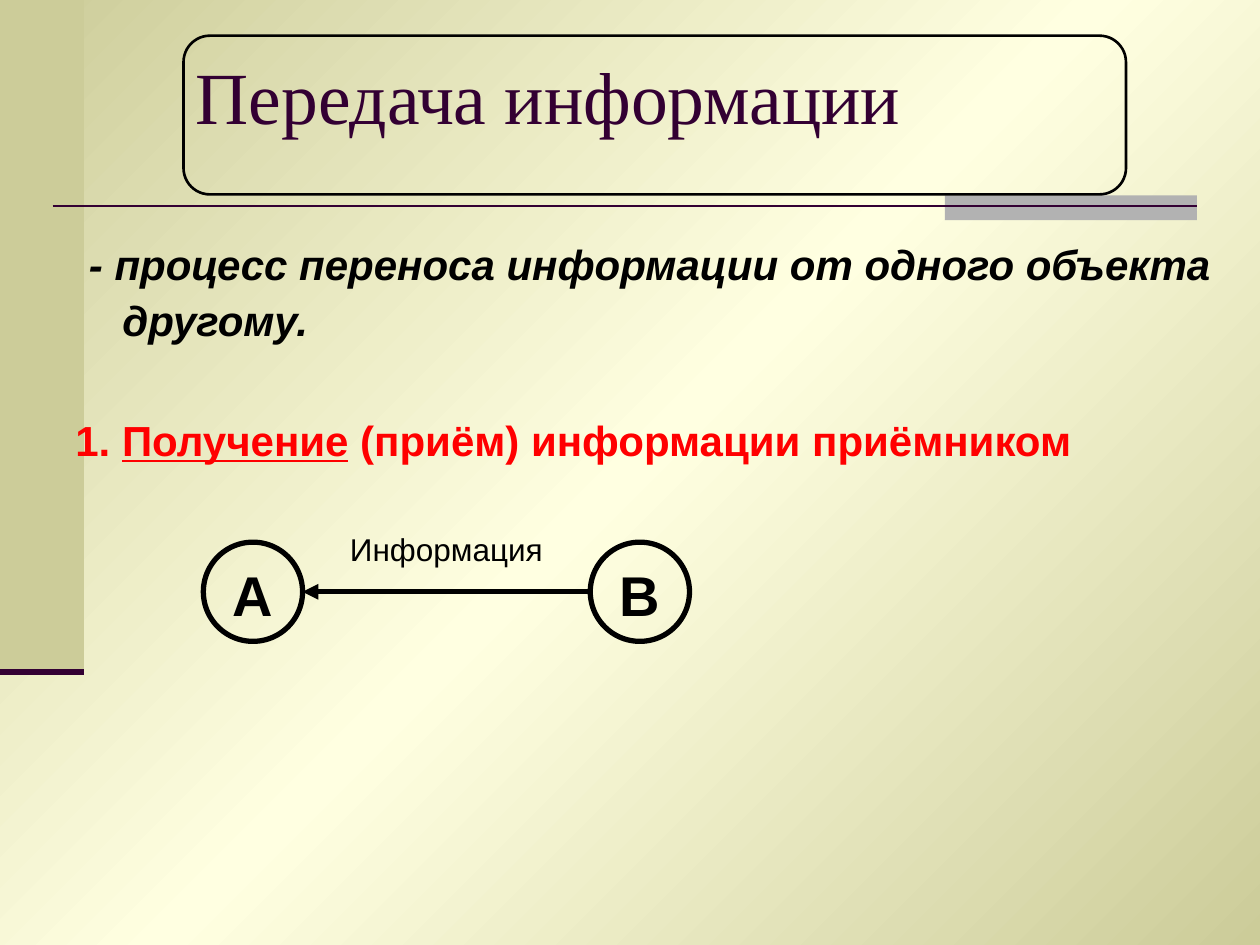
from copy import deepcopy
from lxml.etree import SubElement as Sub
from pptx import Presentation
from pptx.dml.color import RGBColor as Rgb
from pptx.enum.shapes import MSO_CONNECTOR as Link, MSO_SHAPE as Kind
from pptx.enum.text import MSO_ANCHOR as Anchor, PP_ALIGN as Align
from pptx.oxml.ns import qn
from pptx.util import Cm, Pt

PLUM, SAND, BLACK, RED = "330033", "CCCC99", "000000", "FF0000"


def tint(code):
    return Rgb.from_string(code)


def style(item, form):
    for key, val in form.items():
        setattr(item, key, val)


def write(para, text, size, color=BLACK, name="Arial", **form):
    run = para.add_run()
    run.text = text
    style(run.font, dict(form, size=Pt(size), name=name))
    run.font.color.rgb = tint(color)
    para.line_spacing = 1.08


def shape(slide, kind, box, fill=None, line=None, width=1.5):
    item = slide.shapes.add_shape(kind, *map(Cm, box))
    item.shadow.inherit = False
    if fill:
        item.fill.solid()
        item.fill.fore_color.rgb = tint(fill)
    else:
        item.fill.background()
    if line:
        item.line.color.rgb = tint(line)
        item.line.width = Pt(width)
    else:
        item.line.fill.background()
    return item


def rule(slide, left, right, y, color, width):
    item = slide.shapes.add_connector(Link.STRAIGHT, *map(Cm, (left, y, right, y)))
    item.line.color.rgb = tint(color)
    item.line.width = Pt(width)
    Sub(item._element.spPr, qn("a:effectLst"))
    return item


def label(slide, box):
    frame = slide.shapes.add_textbox(*map(Cm, box)).text_frame
    frame.word_wrap = True
    return frame


def backdrop(slide, wide, high):
    fill = slide.background.fill
    fill.gradient()
    fill.gradient_angle = 315
    stops = slide._element.find(".//" + qn("a:gsLst"))
    stops.insert(1, deepcopy(stops[0]))
    for stop, code, pos in zip(fill.gradient_stops, (SAND, "FFFFE1", SAND), (0, 0.5, 1)):
        stop.color.rgb = tint(code)
        stop.position = pos
    side, base = wide / 15, 13.55
    shape(slide, Kind.RECTANGLE, (0, 0, side, base), SAND)
    shape(slide, Kind.RECTANGLE, (0.75 * wide, 3.94, 0.2 * wide, 0.5), "B2B2B2")
    rule(slide, 1.06, 0.95 * wide, 4.15, PLUM, 1.5)
    rule(slide, 0, side, base, PLUM, 3.5)


def title(slide, left, top, wide, high):
    frame = label(slide, (left, top + 0.05, wide, high - 0.05))
    write(frame.paragraphs[0], "Передача информации", 42, PLUM, "Times New Roman")
    shape(slide, Kind.ROUNDED_RECTANGLE, (left, top, wide, high), line=BLACK)


def body(slide, *box):
    frame = label(slide, box)
    lead, item = frame.paragraphs[0], frame.add_paragraph()
    for para in (lead, item):
        para._p.get_or_add_pPr().set("marL", str(Cm(0.95)))
        para._p.get_or_add_pPr().set("indent", str(Cm(-0.95)))
    write(lead, " ", 28)
    write(lead, "- процесс переноса информации от одного объекта другому.", 24,
          bold=True, italic=True)
    item.space_before = Pt(37.5)
    for text, under in (("1. ", False), ("Получение", True),
                        (" (приём) информации приёмником", False)):
        write(item, text, 24, RED, bold=True, underline=under)


def node(slide, text, left, top, size):
    frame = shape(slide, Kind.OVAL, (left, top, size, size), line=BLACK, width=3).text_frame
    style(frame, {"word_wrap": False, "vertical_anchor": Anchor.MIDDLE})
    para = frame.paragraphs[0]
    para.alignment = Align.CENTER
    write(para, text, 32, bold=True)


def scheme(slide, left, top, wide, size):
    far = left + wide - size
    node(slide, "А", left, top, size)
    node(slide, "В", far, top, size)
    arrow = rule(slide, left + size, far, top + size / 2, BLACK, 3)
    Sub(arrow.line._get_or_add_ln(), qn("a:headEnd"), type="triangle")
    span = 4.6
    para = label(slide, (left + (wide - span) / 2, top - 0.42, span, 1.02)).paragraphs[0]
    para.alignment = Align.CENTER
    write(para, "Информация", 18)


def main():
    deck = Presentation()
    style(deck, {"slide_width": Cm(25.4), "slide_height": Cm(19.05)})
    slide = deck.slides.add_slide(deck.slide_layouts[6])
    backdrop(slide, 25.4, 19.05)
    title(slide, 3.7, 0.72, 19, 3.2)
    body(slide, 1.27, 4.45, 24.13, 12.1)
    scheme(slide, 4.1, 10.93, 9.8, 2)
    deck.save("out.pptx")


if __name__ == "__main__":
    main()
